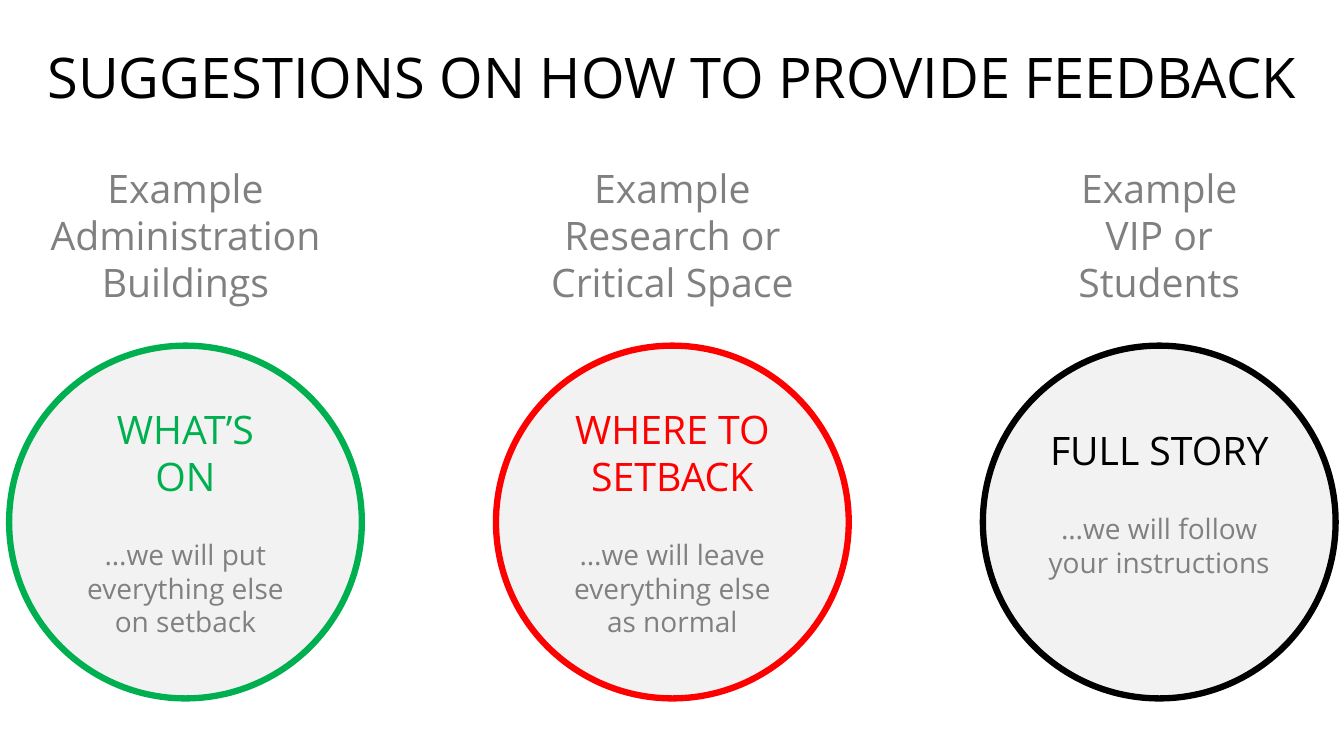
from pptx import Presentation
from pptx.dml.color import RGBColor
from pptx.enum.shapes import MSO_SHAPE as Preset
from pptx.enum.text import MSO_ANCHOR as Anchor, MSO_AUTO_SIZE as AutoSize, PP_ALIGN as Align
from pptx.util import Cm, Pt

COLORS = {
    "black": "000000",
    "green": "00B050",
    "red": "FF0000",
    "grey": "808080",
    "disc": "F2F2F2",
}
FONT = "Open Sans"
DIAMETER = 8.89
FIRST_LEFT, PITCH = 0.23, 12.27
CAPTION_WIDTH = 8.36
BLANK_LINE = 27.2
OPTIONS = [
    (["Example", "Administration Buildings"], "green",
     ["WHAT’S", "ON"], "…we will put everything else on setback", 0.13),
    (["Example Research or", "Critical Space"], "red",
     ["WHERE TO SETBACK"], "…we will leave everything else as normal", 0.13),
    (["Example", "VIP or", "Students"], "black",
     ["FULL STORY"], "…we will follow your instructions", 1.09),
]


def rgb(name):
    return RGBColor.from_string(COLORS[name])


def write(frame, lines, anchor=Anchor.TOP):
    """Fill a text frame with centred lines of (text, size, colour, space before)."""
    for name, value in {"word_wrap": True, "auto_size": AutoSize.NONE,
                        "vertical_anchor": anchor}.items():
        setattr(frame, name, value)
    for index, (text, size, color, gap) in enumerate(lines):
        line = frame.add_paragraph() if index else frame.paragraphs[0]
        line.alignment = Align.CENTER
        line.space_before = Pt(gap)
        run = line.add_run()
        run.text = text
        for name, value in {"name": FONT, "size": Pt(size), "bold": False}.items():
            setattr(run.font, name, value)
        run.font.color.rgb = rgb(color)


def set_title(slide, text):
    title = slide.shapes.title
    for name, value in {"left": 0.48, "top": 0.95, "width": 32.9, "height": 1.96}.items():
        setattr(title, name, Cm(value))
    write(title.text_frame, [(text, 40, "black", 0)])


def add_caption(slide, left, lines):
    caption = slide.shapes.add_textbox(Cm(left), Cm(4.02), Cm(CAPTION_WIDTH), Cm(3.84))
    write(caption.text_frame, [(line, 28, "grey", 0) for line in lines])


def add_circle(slide, left, color, heading, promise, bottom_inset):
    circle = slide.shapes.add_shape(
        Preset.OVAL, Cm(left), Cm(8.71), Cm(DIAMETER), Cm(DIAMETER))
    circle.shadow.inherit = False
    circle.fill.solid()
    circle.fill.fore_color.rgb = rgb("disc")
    circle.line.color.rgb = rgb(color)
    circle.line.width = Pt(4.5)
    circle.text_frame.margin_bottom = Cm(bottom_inset)
    lines = [(line, 28, color, 0) for line in heading]
    write(circle.text_frame, lines + [(promise, 20, "grey", BLANK_LINE)], Anchor.MIDDLE)


def main():
    deck = Presentation()
    deck.slide_width, deck.slide_height = Cm(33.87), Cm(19.05)
    slide = deck.slides.add_slide(deck.slide_layouts.get_by_name("Title Only"))
    set_title(slide, "SUGGESTIONS ON HOW TO PROVIDE FEEDBACK")
    for column, (caption, *circle) in enumerate(OPTIONS):
        left = FIRST_LEFT + column * PITCH
        add_caption(slide, left + (DIAMETER - CAPTION_WIDTH) / 2, caption)
        add_circle(slide, left, *circle)
    deck.save("out.pptx")


if __name__ == "__main__":
    main()
